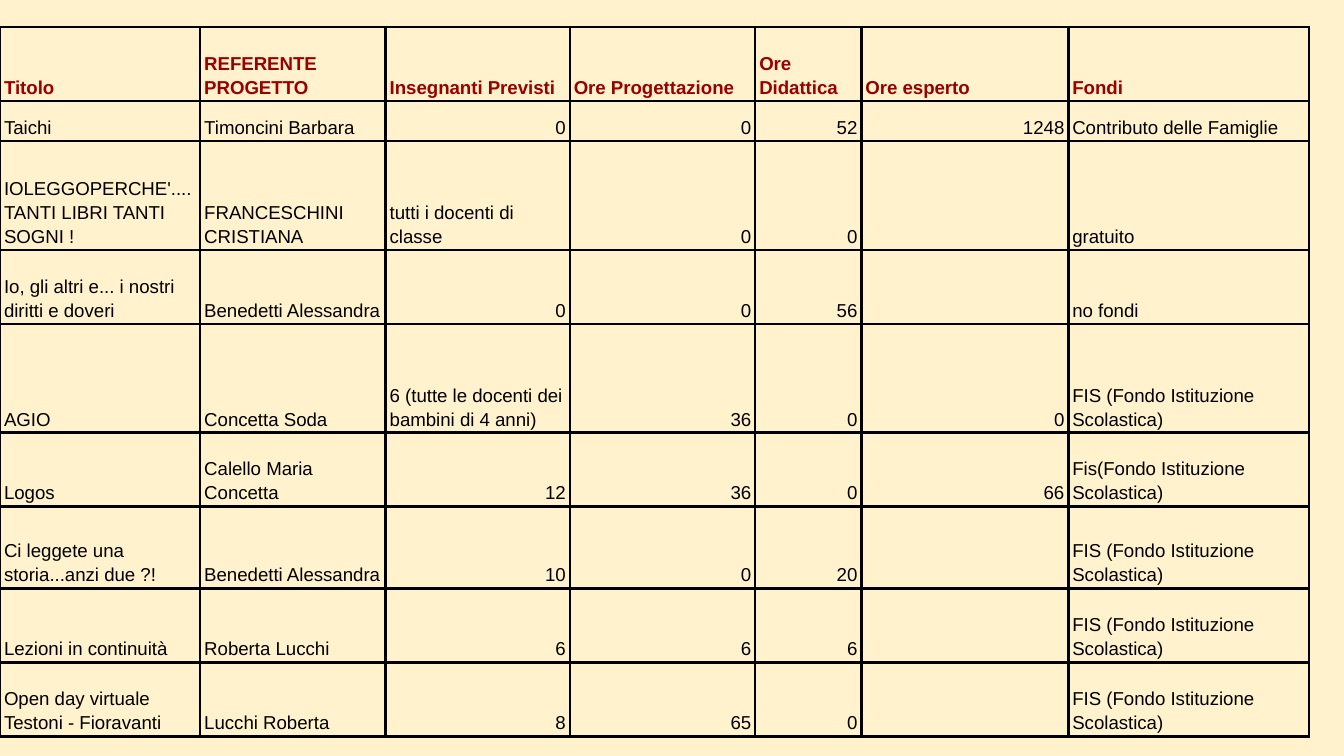
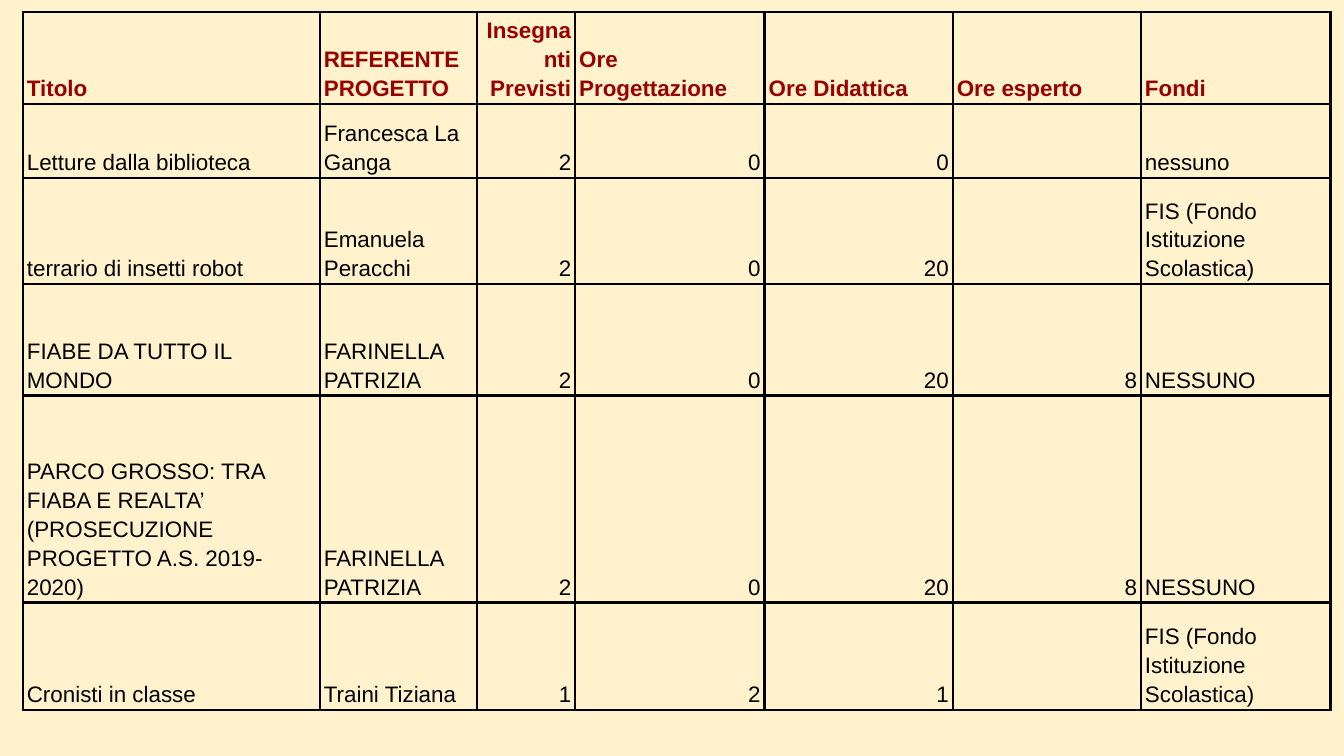
"""Build two slides listing school projects with their teachers, hours and funds."""
from dataclasses import dataclass

from lxml import etree
from pptx import Presentation
from pptx import slide as sl
from pptx import table as tb
from pptx.dml import color
from pptx.enum import text
from pptx.oxml import ns
from pptx.util import Inches, Pt

COLORS = {"background": "FFF2CC", "header": "990000", "body": "000000", "border": "000000"}
FONT = "Arial"
LINE_SPACING = 1.15
BORDER_WIDTH = Pt(1.5)
SLIDE_WIDTH = 10
FRAME_SIDE = Inches(3.28)
FIS = "FIS (Fondo Istituzione Scolastica)"
HEADER = (
    "Titolo", "REFERENTE PROGETTO", "Insegnanti Previsti", "Ore Progettazione",
    "Ore Didattica", "Ore esperto", "Fondi",
)

Value = str | int | None


@dataclass(frozen=True)
class ProjectTable:
    left: float
    top: float
    font_size: int
    column_widths: tuple[float, ...]
    row_heights: tuple[float, ...]
    projects: tuple[tuple[Value, ...], ...]
    right_headers: tuple[str, ...] = ()


PROJECT_TABLES = (
    ProjectTable(
        left=0, top=0.2, font_size=10,
        column_widths=(1.49, 1.38, 1.37, 1.38, 0.79, 1.54, 1.79),
        row_heights=(0.55, 0.3, 0.81, 0.55, 0.81, 0.55, 0.61, 0.55, 0.55),
        projects=(
            ("Taichi", "Timoncini Barbara", 0, 0, 52, 1248, "Contributo delle Famiglie"),
            ("IOLEGGOPERCHE'....TANTI LIBRI TANTI SOGNI !", "FRANCESCHINI CRISTIANA",
             "tutti i docenti di classe", 0, 0, None, "gratuito"),
            ("Io, gli altri e... i nostri diritti e doveri", "Benedetti Alessandra",
             0, 0, 56, None, "no fondi"),
            ("AGIO", "Concetta Soda", "6 (tutte le docenti dei bambini di 4 anni)",
             36, 0, 0, FIS),
            ("Logos", "Calello Maria Concetta", 12, 36, 0, 66,
             "Fis(Fondo Istituzione Scolastica)"),
            ("Ci leggete una storia...anzi due ?!", "Benedetti Alessandra",
             10, 0, 20, None, FIS),
            ("Lezioni in continuità", "Roberta Lucchi", 6, 6, 6, None, FIS),
            ("Open day virtuale Testoni - Fioravanti", "Lucchi Roberta",
             8, 65, 0, None, FIS),
        ),
    ),
    ProjectTable(
        left=0.17, top=0.09, font_size=12,
        column_widths=(2.21, 1.17, 0.73, 1.41, 1.4, 1.4, 1.41),
        row_heights=(0.55, 0.55, 0.79, 0.83, 1.54, 0.8),
        projects=(
            ("Letture dalla biblioteca", "Francesca La Ganga", 2, 0, 0, None, "nessuno"),
            ("terrario di insetti robot", "Emanuela Peracchi", 2, 0, 20, None, FIS),
            ("FIABE DA TUTTO IL MONDO", "FARINELLA PATRIZIA", 2, 0, 20, 8, "NESSUNO"),
            ("PARCO GROSSO: TRA FIABA E REALTA’ (PROSECUZIONE PROGETTO A.S. 2019-2020)",
             "FARINELLA PATRIZIA", 2, 0, 20, 8, "NESSUNO"),
            ("Cronisti in classe", "Traini Tiziana", 1, 2, 1, None, FIS),
        ),
        right_headers=("Insegnanti Previsti",),
    ),
)


def rgb(name: str) -> color.RGBColor:
    return color.RGBColor.from_string(COLORS[name])


def add_borders(cell: tb._Cell) -> None:
    properties = cell._tc.get_or_add_tcPr()
    for side in ("lnL", "lnR", "lnT", "lnB"):
        line = etree.SubElement(properties, ns.qn(f"a:{side}"), w=str(BORDER_WIDTH))
        fill = etree.SubElement(line, ns.qn("a:solidFill"))
        etree.SubElement(fill, ns.qn("a:srgbClr"), val=COLORS["border"])


def fill_cell(cell: tb._Cell, value: Value, size: int, is_header: bool, is_right: bool) -> None:
    add_borders(cell)
    cell.fill.background()
    cell.vertical_anchor = text.MSO_ANCHOR.BOTTOM
    cell.margin_left = cell.margin_right = Inches(0.03)
    cell.margin_top = cell.margin_bottom = Inches(0.02)
    if value is None:
        return
    paragraph = cell.text_frame.paragraphs[0]
    paragraph.line_spacing = LINE_SPACING
    paragraph.alignment = text.PP_ALIGN.RIGHT if is_right else text.PP_ALIGN.LEFT
    run = paragraph.add_run()
    run.text = str(value)
    run.font.name = FONT
    run.font.size = Pt(size)
    run.font.bold = is_header
    run.font.color.rgb = rgb("header" if is_header else "body")


def draw_table(slide: sl.Slide, layout: ProjectTable) -> None:
    rows = (HEADER, *layout.projects)
    frame = slide.shapes.add_table(
        len(rows), len(HEADER), Inches(layout.left), Inches(layout.top),
        FRAME_SIDE, FRAME_SIDE,
    )
    table = frame.table
    table.first_row = table.horz_banding = False
    for column, width in zip(table.columns, layout.column_widths):
        column.width = Inches(width)
    for row, height in zip(table.rows, layout.row_heights):
        row.height = Inches(height)
    frame.width = frame.height = FRAME_SIDE
    for row_index, values in enumerate(rows):
        is_header = row_index == 0
        for column_index, value in enumerate(values):
            is_right = value in layout.right_headers if is_header else isinstance(value, int)
            fill_cell(table.cell(row_index, column_index), value,
                      layout.font_size, is_header, is_right)


def main() -> None:
    presentation = Presentation()
    presentation.slide_width = Inches(SLIDE_WIDTH)
    presentation.slide_height = Inches(SLIDE_WIDTH * 9 / 16)
    for layout in PROJECT_TABLES:
        slide = presentation.slides.add_slide(presentation.slide_layouts[6])
        slide.background.fill.solid()
        slide.background.fill.fore_color.rgb = rgb("background")
        draw_table(slide, layout)
    presentation.save("out.pptx")


if __name__ == "__main__":
    main()
